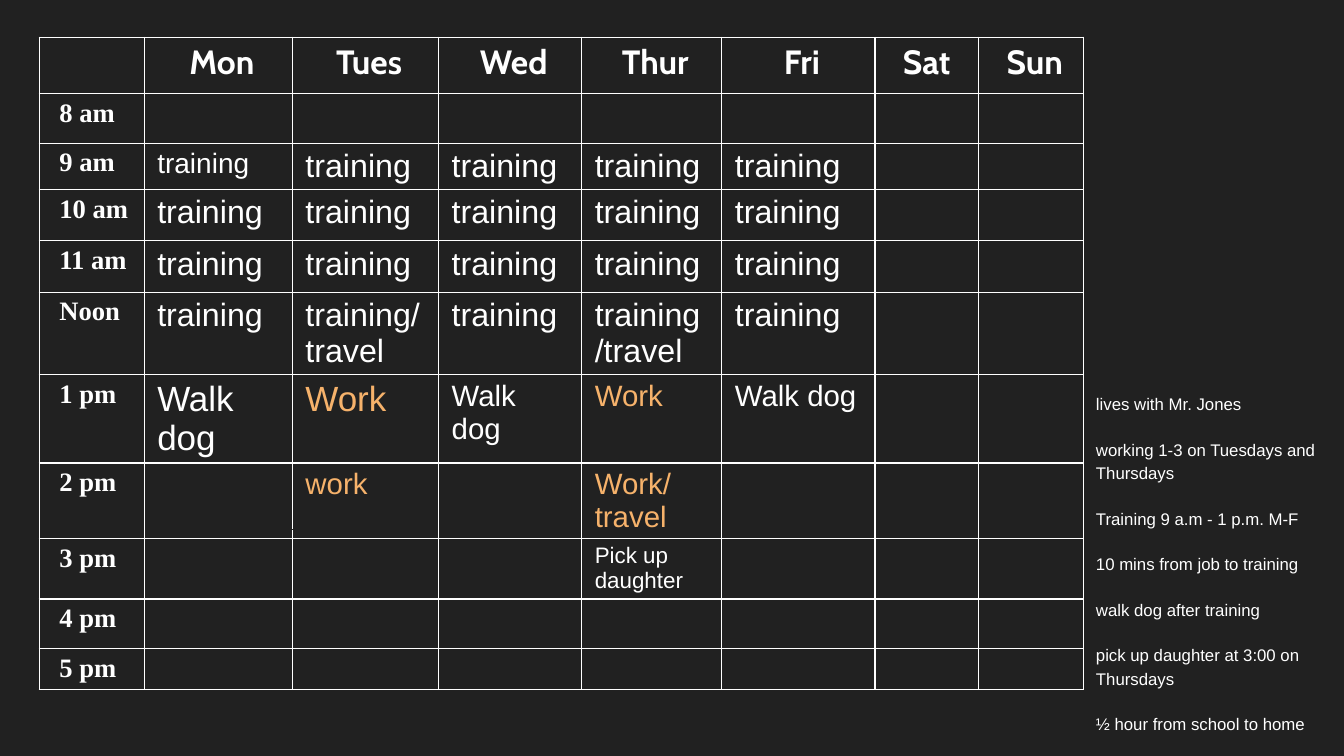
from typing import NamedTuple

from lxml import etree
from pptx import Presentation, util as u
from pptx.dml import color
from pptx.enum import shapes, text
from pptx.oxml import ns

DARK, WHITE, AMBER = "212121", "FFFFFF", "F6B26B"
SERIF, SANS, HEAD = "Times New Roman", "Arial", "Cabin"


class Entry(NamedTuple):
    text: str = ""
    size: float = 23
    hue: str = WHITE


class Hour(NamedTuple):
    label: str
    height: float
    plans: list[Entry]


class Style(NamedTuple):
    font: str
    bold: bool = False
    align: text.PP_ALIGN = text.PP_ALIGN.LEFT
    margin: float = 0
    indent: float = 0


DAY = Style(HEAD, True, text.PP_ALIGN.CENTER, 0.07)
TIME = Style(SERIF, True, margin=0.31, indent=-0.24)
PLAN = Style(SANS)

NONE = Entry()
CLASS = Entry("training")
TRIP = Entry("training/travel")
DAYS = ["Mon", "Tues", "Wed", "Thur", "Fri", "Sat ", "Sun"]
WIDTHS = [1.04, 1.47, 1.45, 1.42, 1.39, 1.52, 1.03, 1.04]
HOURS = [
    Hour("8 am", 0.49, []),
    Hour("9 am", 0.46, [Entry("training", 20)] + [CLASS] * 4),
    Hour("10 am", 0.51, [CLASS] * 5),
    Hour("11 am", 0.51, [CLASS] * 5),
    Hour("Noon", 0.82, [CLASS, TRIP, CLASS, TRIP, CLASS]),
    Hour("1 pm", 0.87, [
        Entry("Walk dog", 25), Entry("Work", 25, AMBER), Entry("Walk\ndog", 21),
        Entry("Work", 21, AMBER), Entry("Walk dog", 21)]),
    Hour("2 pm", 0.75, [
        NONE, Entry("work", 21, AMBER), NONE, Entry("Work/ travel", 21, AMBER)]),
    Hour("3 pm", 0.6, [NONE, NONE, NONE, Entry("Pick up daughter", 16)]),
    Hour("4 pm", 0.49, []),
    Hour("5 pm", 0.39, []),
]
NOTES = [
    "lives with Mr. Jones",
    "working 1-3 on Tuesdays and Thursdays",
    "Training 9 a.m - 1 p.m. M-F",
    "10 mins from job to training",
    "walk dog after training",
    "pick up daughter at 3:00 on Thursdays",
    "½ hour from school to home",
]


def rgb(code: str) -> color.RGBColor:
    return color.RGBColor.from_string(code)


def write(frame, entry: Entry, style: Style) -> None:
    """Add one paragraph for each line of the entry."""
    for i, line in enumerate(entry.text.split("\n")):
        para = frame.add_paragraph() if i else frame.paragraphs[0]
        para.alignment = style.align
        props = para._p.get_or_add_pPr()
        props.set("marL", str(u.Inches(style.margin)))
        props.set("indent", str(u.Inches(style.indent)))
        run = para.add_run()
        run.text = line
        run.font.name, run.font.bold = style.font, style.bold
        run.font.size = u.Pt(entry.size)
        run.font.color.rgb = rgb(entry.hue)


def edge(cell) -> None:
    """Draw a thin white border on all four sides."""
    props = cell._tc.get_or_add_tcPr()
    for i, side in enumerate(("lnL", "lnR", "lnT", "lnB")):
        line = etree.Element(ns.qn(f"a:{side}"), w=str(u.Pt(1)))
        fill = etree.SubElement(line, ns.qn("a:solidFill"))
        etree.SubElement(fill, ns.qn("a:srgbClr"), val=WHITE)
        props.insert(i, line)


def fill_cell(cell, entry: Entry, style: Style, solid: bool) -> None:
    if solid:
        cell.fill.solid()
        cell.fill.fore_color.rgb = rgb(DARK)
    else:
        cell.fill.background()
    edge(cell)
    if entry.text:
        cell.margin_left = cell.margin_right = u.Inches(0.13)
        cell.margin_top = cell.margin_bottom = u.Inches(0.05)
        write(cell.text_frame, entry, style)


def add_week(slide) -> None:
    heights = [0.56] + [hour.height for hour in HOURS]
    table = slide.shapes.add_table(
        len(heights), len(WIDTHS), u.Inches(0.39), u.Inches(0.37),
        u.Inches(sum(WIDTHS)), u.Inches(sum(heights))).table
    table.first_row = table.horz_banding = False
    for col, width in zip(table.columns, WIDTHS):
        col.width = u.Inches(width)
    for row, height in zip(table.rows, heights):
        row.height = u.Inches(height)

    fill_cell(table.cell(0, 0), NONE, DAY, False)
    for c, day in enumerate(DAYS, 1):
        fill_cell(table.cell(0, c), Entry(day, 24), DAY, True)
    for r, hour in enumerate(HOURS, 1):
        fill_cell(table.cell(r, 0), Entry(hour.label, 19), TIME, False)
        plans = hour.plans + [NONE] * (len(DAYS) - len(hour.plans))
        for c, plan in enumerate(plans, 1):
            fill_cell(table.cell(r, c), plan, PLAN, True)


def add_dash(slide) -> None:
    dash = slide.shapes.add_connector(
        shapes.MSO_CONNECTOR.STRAIGHT,
        u.Inches(3.11), u.Inches(5.25), u.Inches(2.89), u.Inches(5.25))
    dash.line.color.rgb = rgb(DARK)
    dash.line.width = u.Pt(0.75)
    etree.SubElement(dash._element.spPr, ns.qn("a:effectLst"))


def add_notes(slide) -> None:
    box = slide.shapes.add_textbox(
        u.Inches(10.74), u.Inches(3.75), u.Inches(2.67), u.Inches(3.93))
    frame = box.text_frame
    frame.word_wrap = True
    frame.auto_size = text.MSO_AUTO_SIZE.SHAPE_TO_FIT_TEXT
    frame.margin_left = frame.margin_right = u.Inches(0.13)
    frame.margin_top = frame.margin_bottom = u.Inches(0.13)
    write(frame, Entry("\n".join(NOTES), 12), PLAN)
    for para in frame.paragraphs:
        para.line_spacing = 1.15
    for para in frame.paragraphs[1:]:
        para.space_before = u.Pt(16)
    frame.paragraphs[-1].space_after = u.Pt(16)


def main() -> None:
    deck = Presentation()
    deck.slide_width, deck.slide_height = u.Inches(13.33), u.Inches(7.5)
    slide = deck.slides.add_slide(deck.slide_layouts[6])
    slide.background.fill.solid()
    slide.background.fill.fore_color.rgb = rgb(DARK)
    add_week(slide)
    add_dash(slide)
    add_notes(slide)
    deck.save("out.pptx")


if __name__ == "__main__":
    main()
